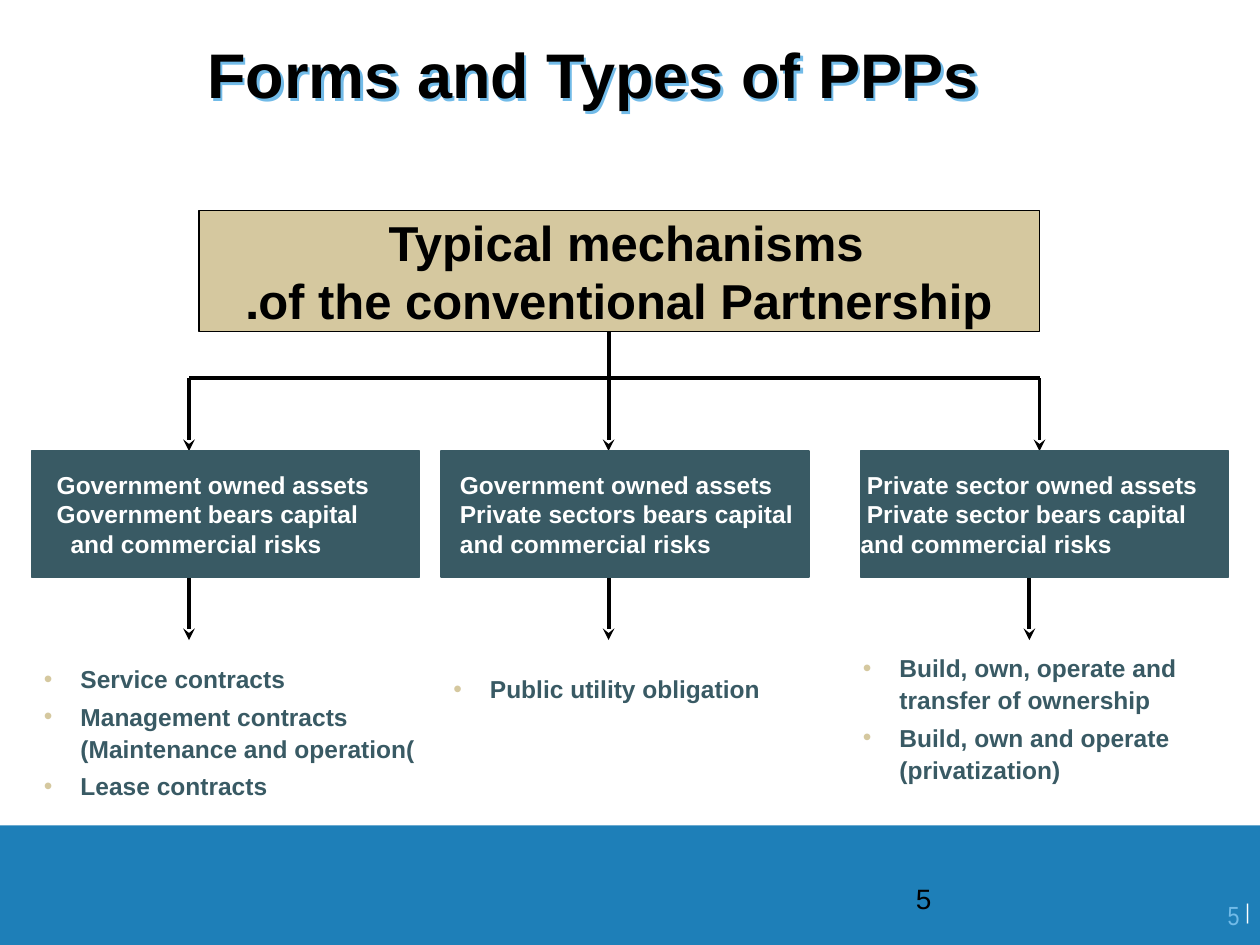
from lxml import etree
from pptx import Presentation
from pptx.dml.color import RGBColor
from pptx.enum.shapes import MSO_CONNECTOR, MSO_SHAPE
from pptx.enum.text import MSO_ANCHOR, PP_ALIGN
from pptx.oxml import parse_xml
from pptx.oxml.ns import nsdecls, qn
from pptx.util import Inches, Pt

RECTANGLE, STRAIGHT = MSO_SHAPE.RECTANGLE, MSO_CONNECTOR.STRAIGHT
LEFT, CENTER, RIGHT = PP_ALIGN.LEFT, PP_ALIGN.CENTER, PP_ALIGN.RIGHT
TOP, MIDDLE = MSO_ANCHOR.TOP, MSO_ANCHOR.MIDDLE
BLACK, WHITE, SLATE, SAND = "000000", "FFFFFF", "395A64", "D5C89F"
BLUE, PALE_BLUE = "1E7FB8", "72BBE8"


def color(value):
    return RGBColor.from_string(value)


def add_box(place, lines, size, text_color, bold=True, fill=None, line=None,
            line_width=1, align=LEFT, anchor=MIDDLE, margins=(0.1, 0.05, 0.1, 0.05)):
    """Add a rectangle, or a text box when there is no fill, with one paragraph a line."""
    place = [Inches(value) for value in place]
    if fill:
        shape = slide.shapes.add_shape(RECTANGLE, *place)
        shape.shadow.inherit = False
        shape.fill.solid()
        shape.fill.fore_color.rgb = color(fill)
        if line:
            shape.line.color.rgb = color(line)
            shape.line.width = Pt(line_width)
        else:
            shape.line.fill.background()
    else:
        shape = slide.shapes.add_textbox(*place)
    frame = shape.text_frame
    frame.word_wrap = True
    frame.vertical_anchor = anchor
    for side, margin in zip(("left", "top", "right", "bottom"), margins):
        setattr(frame, f"margin_{side}", Inches(margin))
    text_format = {"name": "Arial", "size": Pt(size), "bold": bold}
    for index, text in enumerate(lines):
        paragraph = frame.paragraphs[0] if index == 0 else frame.add_paragraph()
        paragraph.alignment = align
        run = paragraph.add_run()
        run.text = text
        for name, value in text_format.items():
            setattr(run.font, name, value)
        run.font.color.rgb = color(text_color)
    return shape


presentation = Presentation()
presentation.slide_width, presentation.slide_height = Inches(10), Inches(7.5)
slide = presentation.slides.add_slide(presentation.slide_layouts[6])

# Footer band with the page numbers
add_box((0, 6.55, 10, 0.95), [], 16, WHITE, fill=BLUE)
add_box((7.17, 6.95, 2.33, 0.4), ["5"], 16, BLACK, bold=False, anchor=TOP)
corner = add_box((9.53, 7.05, 0.39, 0.36), ["5 "], 15, PALE_BLUE, bold=False,
                 align=RIGHT, anchor=TOP, margins=(0, 0, 0, 0))
number_paragraph = corner.text_frame.paragraphs[0]
bar = number_paragraph.add_run()
bar.text = "|"
bar.font.size = Pt(21)
bar.font.color.rgb = color(WHITE)
bar.font._element.set("baseline", "14000")
for run in number_paragraph.runs:
    run.font.name = "Arial Narrow"

# Title with a pale blue shadow
title = add_box((0, 0.17, 9.42, 0.83), ["Forms and Types of PPPs"], 36, BLACK,
                align=CENTER, margins=(0, 0, 0, 0))
title._element.spPr.append(parse_xml(
    f'<a:effectLst {nsdecls("a")}><a:outerShdw dist="25400" dir="2700000">'
    f'<a:srgbClr val="{PALE_BLUE}"/></a:outerShdw></a:effectLst>'))

# Tree lines: trunk, crossbar, branches and arrows down to the lists
tree_lines = [
    ((4.83, 1.83), (4.83, 3.58), True),
    ((1.5, 3), (8.25, 3), False),
    ((1.5, 3), (1.5, 3.58), True),
    ((8.25, 3), (8.25, 3.58), True),
] + [((x, 4.58), (x, 5.08), True) for x in (1.5, 4.83, 8.17)]
for start, end, has_arrow in tree_lines:
    connector = slide.shapes.add_connector(
        STRAIGHT, *[Inches(value) for value in start + end])
    connector.line.color.rgb = color(BLACK)
    connector.line.width = Pt(2.25)
    if has_arrow:
        etree.SubElement(connector.line._get_or_add_ln(), qn("a:tailEnd"), type="stealth")
    etree.SubElement(connector._element.spPr, qn("a:effectLst"))

# Heading box, set right to left
heading = add_box((1.58, 1.67, 6.67, 0.96),
                  ["Typical mechanisms ", "of the conventional Partnership."], 28, BLACK,
                  fill=SAND, line=BLACK, line_width=0.75, align=CENTER)
for paragraph in heading.text_frame.paragraphs:
    paragraph._p.get_or_add_pPr().set("rtl", "1")

# Ownership boxes: left, width, left margin, indent of each line, lines
ownership = [
    (0.25, 3.08, 0.2, (0, 0, 0.11),
     ["Government owned assets", "Government bears capital", "and commercial risks"]),
    (3.5, 2.92, 0.15, (0, 0, 0),
     ["Government owned assets", "Private sectors bears capital", "and commercial risks"]),
    (6.83, 2.92, 0, (0.05, 0.05, 0),
     ["Private sector owned assets", "Private sector bears capital", "and commercial risks"]),
]
for left, width, margin, indents, lines in ownership:
    shape = add_box((left, 3.58, width, 1), lines, 14, WHITE, fill=SLATE, line=SLATE,
                    margins=(margin, 0.05, 0, 0.05))
    for paragraph, indent in zip(shape.text_frame.paragraphs, indents):
        paragraph._p.get_or_add_pPr().set("marL", str(Inches(indent)))

# Bulleted lists of contract types
contract_lists = [
    ((0.25, 5.17, 3.25, 1.37),
     ["Service contracts", "Management contracts (Maintenance and operation(",
      "Lease contracts"]),
    ((3.5, 5.25, 3, 1), ["Public utility obligation"]),
    ((6.75, 5.08, 2.92, 1.37),
     ["Build, own, operate and transfer of ownership",
      "Build, own and operate (privatization)"]),
]
for place, items in contract_lists:
    shape = add_box(place, items, 14, SLATE, anchor=TOP, margins=(0.1, 0.08, 0.1, 0.05))
    for index, paragraph in enumerate(shape.text_frame.paragraphs):
        paragraph.line_spacing = 1.1
        paragraph.space_before = Pt(2.8 if index else 0)
        properties = paragraph._p.get_or_add_pPr()
        properties.set("marL", str(Inches(0.29)))
        properties.set("indent", str(Inches(-0.29)))
        bullet_color = etree.SubElement(properties, qn("a:buClr"))
        etree.SubElement(bullet_color, qn("a:srgbClr"), val=SAND)
        etree.SubElement(properties, qn("a:buFont"), typeface="Arial")
        etree.SubElement(properties, qn("a:buChar"), char="•")

presentation.save("out.pptx")
